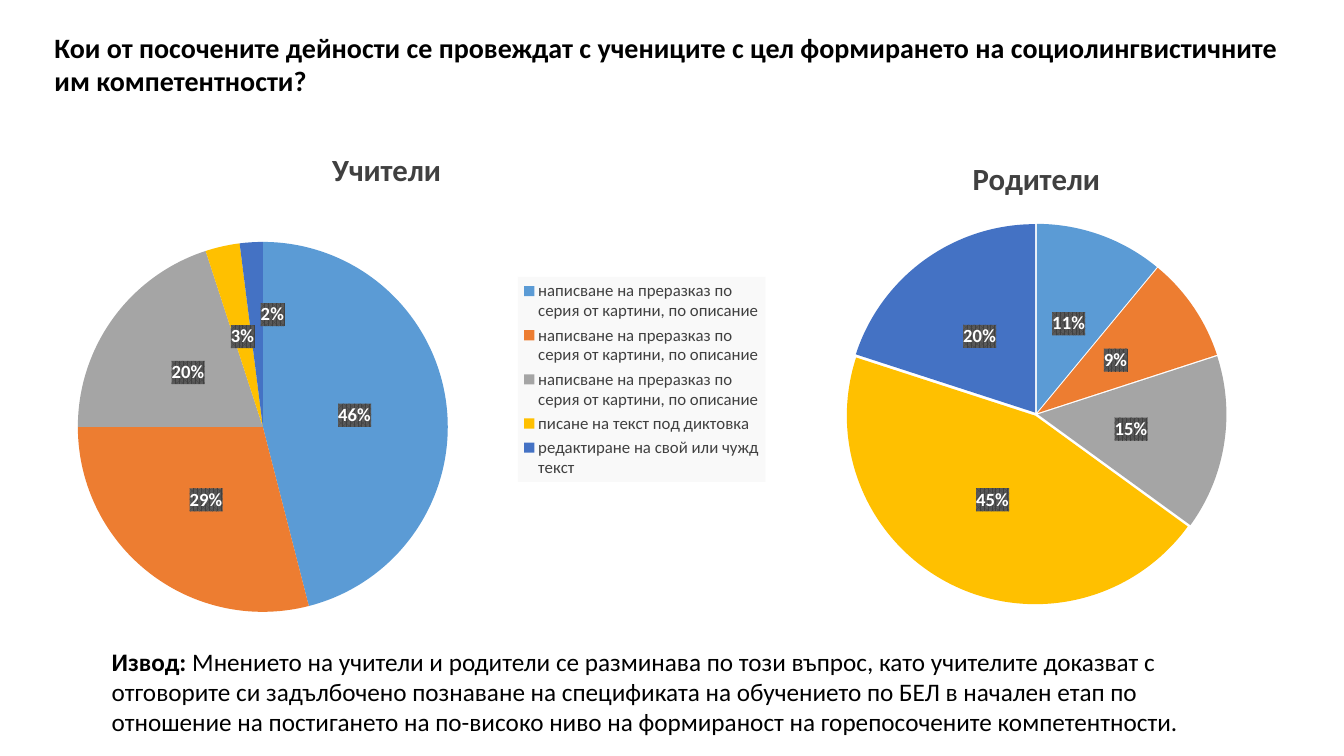
from dataclasses import dataclass

from lxml.etree import _Element as Element
from pptx import Presentation
from pptx.chart.chart import Chart
from pptx.chart.data import CategoryChartData
from pptx.dml.color import RGBColor
from pptx.enum.chart import XL_CHART_TYPE as ChartType
from pptx.enum.chart import XL_LABEL_POSITION as LabelPosition
from pptx.enum.chart import XL_LEGEND_POSITION as LegendPosition
from pptx.enum.text import MSO_ANCHOR as Anchor
from pptx.enum.text import PP_ALIGN as Align
from pptx.oxml import parse_xml
from pptx.oxml.ns import nsdecls, qn
from pptx.util import Pt

FONT = "Calibri"
COLORS = {
    "text": "000000",
    "chart text": "404040",
    "label text": "FFFFFF",
    "label dark": "404040",
    "label light": "595959",
    "legend": "F9F9F9",
}
SLICE_COLORS = {
    "blue": "5B9BD5",
    "orange": "ED7D31",
    "gray": "A5A5A5",
    "yellow": "FFC000",
    "navy": "4472C4",
}
RETELLING = "написване на преразказ по серия от картини, по описание"
ACTIVITIES = [RETELLING] * 3 + [
    "писане на текст под диктовка",
    "редактиране на свой или чужд текст",
]
QUESTION = (
    "Кои от посочените дейности се провеждат с учениците с цел "
    "формирането на социолингвистичните им компетентности?"
)
CONCLUSION = (
    "Мнението на учители и родители се разминава по този въпрос, като "
    "учителите доказват с отговорите си задълбочено познаване на спецификата "
    "на обучението по БЕЛ в начален етап по отношение на постигането на "
    "по-високо ниво на формираност на горепосочените компетентности."
)


@dataclass
class Frame:
    left: float
    top: float
    width: float
    height: float

    def lengths(self) -> list[Pt]:
        return [Pt(n) for n in (self.left, self.top, self.width, self.height)]


@dataclass
class Pie:
    name: str
    categories: list[str]
    values: list[int]
    frame: Frame
    plot: Frame  # fractions of the chart
    explosion: int = 0
    legend: Frame | None = None  # fractions of the chart
    last_label_shift: tuple[float, float] | None = None


PIES = [
    Pie("Родители", list("12345"), [11, 9, 15, 45, 20],
        Frame(543.6, 97.9, 393.1, 344.2), Frame(0.15, 0.18, 0.7, 0.79),
        explosion=1),
    Pie("Учители", ACTIVITIES, [46, 29, 20, 3, 2],
        Frame(0, 90.7, 552.2, 357.1), Frame(0.1, 0.23, 0.48, 0.74),
        legend=Frame(0.67, 0.3, 0.32, 0.41), last_label_shift=(0.02, -0.04)),
]


def style_font(font, size: float, color: str, bold: bool = False) -> None:
    font.name = FONT
    font.size = Pt(size)
    font.bold = bold
    font.color.rgb = RGBColor.from_string(COLORS[color])


def set_layout(parent: Element, index: int, settings: dict) -> None:
    """Give a chart part a manual layout, as the child at the given index."""
    for old in parent.findall(qn("c:layout")):
        parent.remove(old)
    items = "".join(f'<c:{key} val="{value}"/>' for key, value in settings.items())
    parent.insert(index, parse_xml(
        f'<c:layout {nsdecls("c")}><c:manualLayout>{items}'
        "</c:manualLayout></c:layout>"))


def edge_settings(area: Frame) -> dict:
    return {"xMode": "edge", "yMode": "edge", "x": area.left, "y": area.top,
            "w": area.width, "h": area.height}


def set_background(part: Element, fill: str) -> None:
    """Fill a chart part whose text properties are already present."""
    for old in part.findall(qn("c:spPr")):
        part.remove(old)
    part.find(qn("c:txPr")).addprevious(parse_xml(
        f'<c:spPr {nsdecls("c", "a")}>{fill}<a:ln><a:noFill/></a:ln></c:spPr>'))


def color_xml(color: str) -> str:
    return f'<a:srgbClr val="{COLORS[color]}"/>'


LABEL_FILL = (
    f'<a:pattFill prst="pct75"><a:fgClr>{color_xml("label dark")}</a:fgClr>'
    f'<a:bgClr>{color_xml("label light")}</a:bgClr></a:pattFill>'
)
LEGEND_FILL = f'<a:solidFill>{color_xml("legend")}</a:solidFill>'


def add_labels(series, shift: tuple[float, float] | None) -> None:
    labels = series.data_labels
    labels.show_percentage = True
    labels.show_value = False
    labels.number_format = "0%"
    labels.number_format_is_linked = False
    labels.position = LabelPosition.CENTER
    style_font(labels.font, 13.3, "label text", bold=True)
    set_background(labels._element, LABEL_FILL)
    if shift:
        label = series.points[len(series.values) - 1].data_label
        label.position = LabelPosition.CENTER
        style_font(label.font, 13.3, "label text", bold=True)
        element = labels._element.find(qn("c:dLbl"))
        element.find(qn("c:showVal")).set("val", "0")
        element.find(qn("c:showPercent")).set("val", "1")
        set_background(element, LABEL_FILL)
        set_layout(element, 1, {"x": shift[0], "y": shift[1]})


def add_legend(chart: Chart, area: Frame) -> None:
    chart.has_legend = True
    legend = chart.legend
    legend.position = LegendPosition.RIGHT
    legend.include_in_layout = False
    style_font(legend.font, 12, "chart text")
    set_background(legend._element, LEGEND_FILL)
    set_layout(legend._element, 1, edge_settings(area))


def add_pie(page, pie: Pie) -> None:
    data = CategoryChartData()
    data.categories = pie.categories
    data.add_series(pie.name, pie.values)
    chart = page.shapes.add_chart(ChartType.PIE, *pie.frame.lengths(), data).chart
    style_font(chart.font, 10, "text")
    chart.has_title = True
    heading = chart.chart_title.text_frame
    heading.text = pie.name
    style_font(heading.paragraphs[0].font, 22, "chart text", bold=True)
    chart.chart_title.include_in_layout = False

    plot = chart.plots[0]
    plot.vary_by_categories = True
    series = plot.series[0]
    for index, color in enumerate(SLICE_COLORS.values()):
        piece = series.points[index].format
        piece.fill.solid()
        piece.fill.fore_color.rgb = RGBColor.from_string(color)
        piece.line.fill.background()
    add_labels(series, pie.last_label_shift)
    if pie.explosion:
        series._element.find(qn("c:dPt")).addprevious(parse_xml(
            f'<c:explosion {nsdecls("c")} val="{pie.explosion}"/>'))
    plot_area = chart._chartSpace.chart.plotArea
    set_layout(plot_area, 0, {"layoutTarget": "inner", **edge_settings(pie.plot)})
    chart.has_legend = False
    if pie.legend:
        add_legend(chart, pie.legend)


def add_question(page) -> None:
    title = page.shapes.title
    title.left, title.top, title.width, title.height = Frame(
        31.7, 18, 905.8, 55.4).lengths()
    title.text_frame.text = QUESTION
    title.text_frame.vertical_anchor = Anchor.TOP
    para = title.text_frame.paragraphs[0]
    para.alignment = Align.LEFT
    style_font(para.font, 20, "text", bold=True)


def add_conclusion(page) -> None:
    box = page.shapes.add_textbox(*Frame(72.7, 457.9, 831.6, 72.7).lengths())
    box.text_frame.word_wrap = True
    para = box.text_frame.paragraphs[0]
    style_font(para.font, 18, "text")
    lead = para.add_run()
    lead.text = "Извод: "
    lead.font.bold = True
    para.add_run().text = CONCLUSION


def main() -> None:
    deck = Presentation()
    deck.slide_width, deck.slide_height = Pt(960), Pt(540)
    page = deck.slides.add_slide(deck.slide_layouts.get_by_name("Title Only"))
    for pie in PIES:
        add_pie(page, pie)
    add_question(page)
    add_conclusion(page)
    deck.save("out.pptx")


if __name__ == "__main__":
    main()
